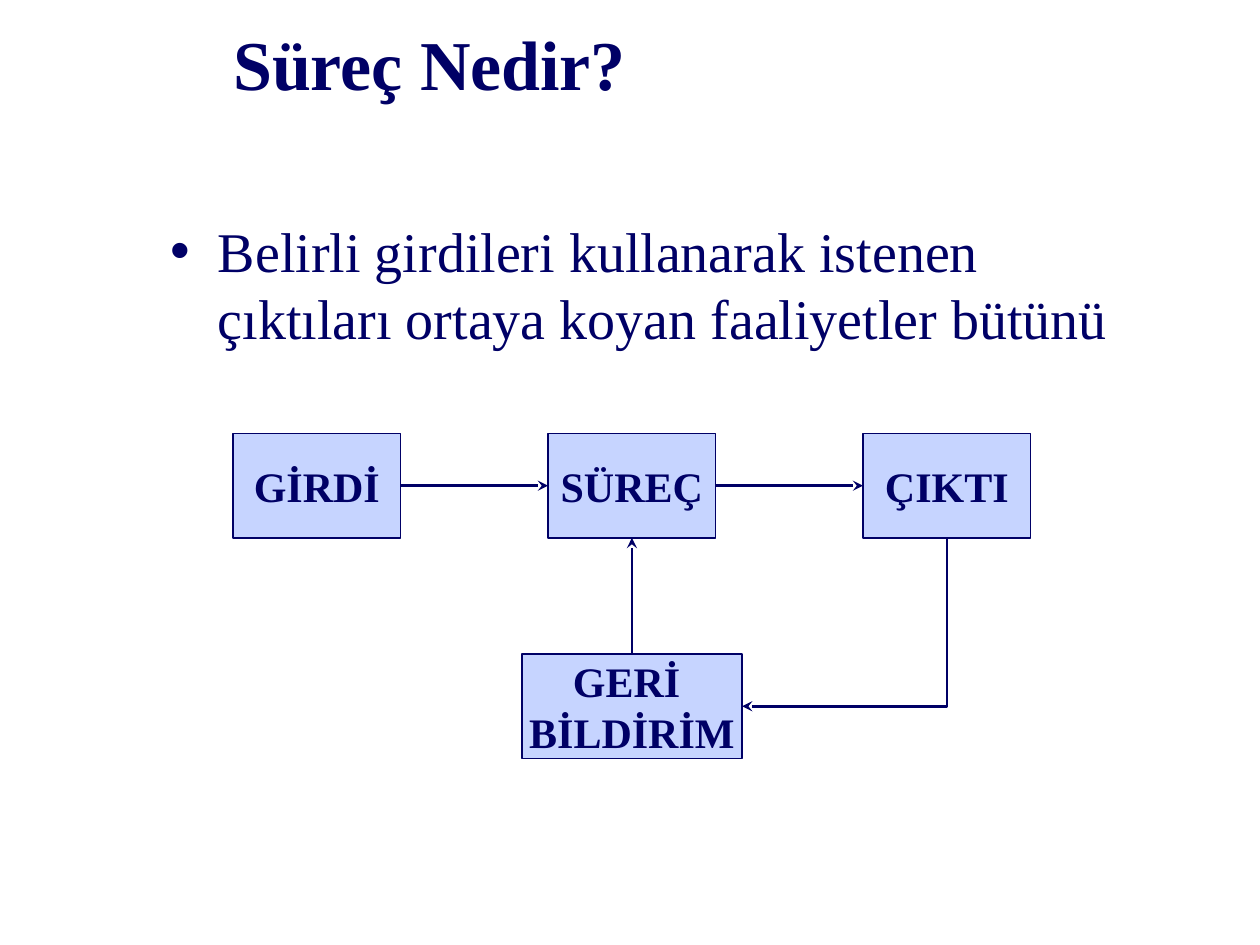
from lxml import etree
from pptx import Presentation
from pptx.dml.color import RGBColor
from pptx.enum.shapes import MSO_CONNECTOR, MSO_SHAPE
from pptx.enum.text import MSO_ANCHOR, MSO_AUTO_SIZE, PP_ALIGN
from pptx.oxml.ns import qn
from pptx.util import Inches, Pt

STRAIGHT, ELBOW = MSO_CONNECTOR.STRAIGHT, MSO_CONNECTOR.ELBOW
RECTANGLE = MSO_SHAPE.RECTANGLE
TOP, MIDDLE = MSO_ANCHOR.TOP, MSO_ANCHOR.MIDDLE
LEFT, CENTER = PP_ALIGN.LEFT, PP_ALIGN.CENTER
NO_AUTOFIT = MSO_AUTO_SIZE.NONE

FONT, NAVY, PALE_BLUE = "Times New Roman", "000066", "8FAAFF"
SIDE_TOP, SIDE_LEFT, SIDE_BOTTOM, SIDE_RIGHT = range(4)


def color(hex_string):
    return RGBColor.from_string(hex_string)


def format_text(text_frame, size, bold, alignment, anchor):
    text_frame.auto_size = NO_AUTOFIT
    text_frame.vertical_anchor = anchor
    for paragraph in text_frame.paragraphs:
        paragraph.alignment = alignment
        paragraph.space_before = Pt(0)
        for run in paragraph.runs:
            run.font.name = FONT
            run.font.size = Pt(size)
            run.font.bold = bold
            run.font.color.rgb = color(NAVY)


def place(shape, left, top, width, height):
    shape.left, shape.top = Inches(left), Inches(top)
    shape.width, shape.height = Inches(width), Inches(height)


def add_title(slide, box):
    title = slide.shapes.title
    place(title, *box)
    title.text_frame.text = "Süreç Nedir?"
    format_text(title.text_frame, 40, True, LEFT, MIDDLE)


def add_definition(slide, box):
    body = slide.placeholders[1]
    place(body, *box)
    body.text_frame.text = ("Belirli girdileri kullanarak istenen "
                            "çıktıları ortaya koyan faaliyetler bütünü")
    properties = body.text_frame.paragraphs[0]._p.get_or_add_pPr()
    properties.set("marL", str(Inches(0.38)))
    properties.set("indent", str(Inches(-0.38)))
    etree.SubElement(properties, qn("a:buChar"), char="•")
    format_text(body.text_frame, 32, False, LEFT, TOP)


def add_step(slide, text, left, top, width, height):
    step = slide.shapes.add_shape(
        RECTANGLE, Inches(left), Inches(top), Inches(width), Inches(height))
    step.shadow.inherit = False
    step.fill.solid()
    step.fill.fore_color.rgb = color(PALE_BLUE)
    fill_color = step.fill._xPr.find(qn("a:solidFill"))[0]
    etree.SubElement(fill_color, qn("a:alpha"), val="50000")
    step.line.color.rgb = color(NAVY)
    step.line.width = Pt(1)
    step.text_frame.text = text
    step.text_frame.word_wrap = False
    format_text(step.text_frame, 24, True, CENTER, MIDDLE)
    return step


def style_arrow(connector):
    connector.line.color.rgb = color(NAVY)
    connector.line.width = Pt(1.5)
    etree.SubElement(connector.line._get_or_add_ln(), qn("a:tailEnd"), type="stealth")
    etree.SubElement(connector._element.spPr, qn("a:effectLst"))


def add_straight_arrow(slide, start, start_side, end, end_side):
    connector = slide.shapes.add_connector(STRAIGHT, 0, 0, 0, 0)
    connector.begin_connect(start, start_side)
    connector.end_connect(end, end_side)
    style_arrow(connector)


def add_corner_arrow(slide, start, end):
    """Run down from the bottom of start, then left to the right side of end."""
    begin_x, begin_y = start.left + start.width // 2, start.top + start.height
    end_x, end_y = end.left + end.width, end.top + end.height // 2
    # The frame is turned a quarter, so its width spans the vertical distance
    width, height = end_y - begin_y, begin_x - end_x
    left = (begin_x + end_x - width) // 2
    top = (begin_y + end_y - height) // 2
    connector = slide.shapes.add_connector(ELBOW, left, top, left + width, top + height)
    properties = connector._element.spPr
    properties.find(qn("a:prstGeom")).set("prst", "bentConnector2")
    properties.find(qn("a:xfrm")).set("rot", str(90 * 60000))
    style_arrow(connector)


def add_process_diagram(slide, left, top):
    step_width, step_height, pitch = 1.33, 0.83, 2.5
    feedback_width, feedback_drop = 1.75, 1.75

    # Main row
    source, process, result = [
        add_step(slide, text, left + index * pitch, top, step_width, step_height)
        for index, text in enumerate(["GİRDİ", "SÜREÇ", "ÇIKTI"])]

    # Feedback box, centred below the process
    feedback_left = left + pitch + (step_width - feedback_width) / 2
    feedback = add_step(slide, "GERİ \nBİLDİRİM", feedback_left,
                        top + feedback_drop, feedback_width, step_height)

    # Arrows
    add_straight_arrow(slide, source, SIDE_RIGHT, process, SIDE_LEFT)
    add_straight_arrow(slide, process, SIDE_RIGHT, result, SIDE_LEFT)
    add_straight_arrow(slide, feedback, SIDE_TOP, process, SIDE_BOTTOM)
    add_corner_arrow(slide, result, feedback)


def main():
    presentation = Presentation()
    presentation.slide_width, presentation.slide_height = Inches(10), Inches(7.5)
    slide = presentation.slides.add_slide(presentation.slide_layouts[1])
    add_title(slide, (1.75, 0.08, 7.67, 0.83))
    add_definition(slide, (1.25, 1.67, 7.83, 4.75))
    add_process_diagram(slide, 1.85, 3.44)
    presentation.save("out.pptx")


if __name__ == "__main__":
    main()
